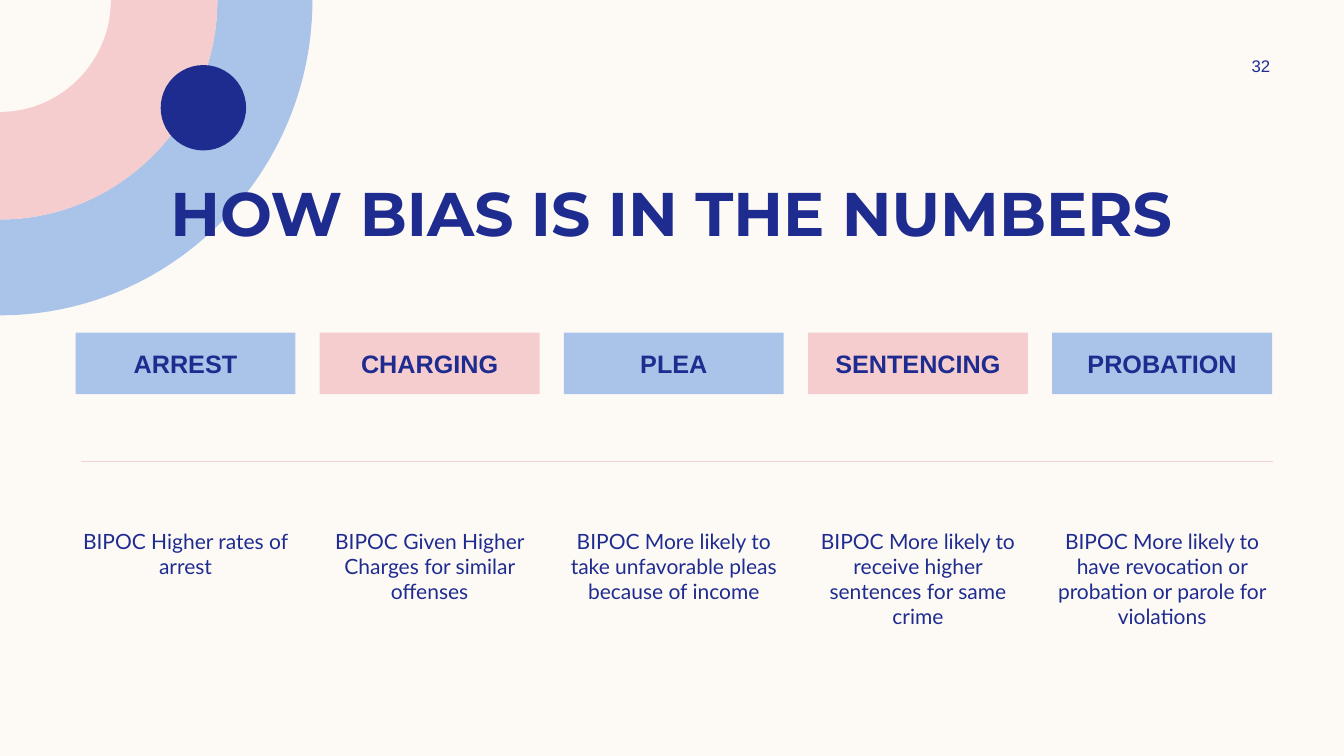
from lxml.etree import SubElement
from pptx import Presentation
from pptx.dml.color import RGBColor
from pptx.enum.shapes import MSO_CONNECTOR, MSO_SHAPE
from pptx.enum.text import MSO_ANCHOR as Anchor, PP_ALIGN as Align
from pptx.oxml.ns import qn
from pptx.util import Pt

CREAM = RGBColor(0xFD, 0xFA, 0xF6)
BLUE = RGBColor(0xAA, 0xC3, 0xE8)
PINK = RGBColor(0xF5, 0xCD, 0xCE)
NAVY = RGBColor(0x1F, 0x2C, 0x8F)
RULE = RGBColor(0xF2, 0xD1, 0xD1)

STAGES = [
    ("ARREST", "BIPOC Higher rates of arrest", 62.6),
    ("CHARGING", "BIPOC Given Higher Charges for similar offenses", 62.6),
    ("PLEA", "BIPOC More likely to take unfavorable pleas because of income", 62.6),
    ("SENTENCING", "BIPOC More likely to receive higher sentences for same crime", 79.2),
    ("PROBATION", "BIPOC More likely to have revocation or probation or parole for violations", 86.4),
]
STAGE_LEFT, STAGE_STEP, STAGE_WIDTH = 54, 174.4, 157
OUTER, MIDDLE, INNER = (223.2, 225.2), (155.3, 156.8), (79.2, 79.9)
ARC_PULL = 0.55


def paint(shape, color):
    shape.shadow.inherit = False
    shape.fill.solid()
    shape.fill.fore_color.rgb = color
    shape.line.fill.background()


def write(shape, text, font, size, bold=False, anchor=Anchor.TOP, inset=(7.2, 3.6)):
    frame = shape.text_frame
    frame.word_wrap = True
    frame.vertical_anchor = anchor
    frame.margin_left = frame.margin_right = Pt(inset[0])
    frame.margin_top = frame.margin_bottom = Pt(inset[1])
    frame.text = text
    paragraph = frame.paragraphs[0]
    paragraph.alignment = Align.CENTER
    style = paragraph.runs[0].font
    style.name, style.size, style.bold = font, Pt(size), bold
    style.color.rgb = NAVY


def add_label(slide, box, text, font, size, **options):
    label = slide.shapes.add_textbox(*map(Pt, box))
    write(label, text, font, size, **options)


def quarter_arc(radii):
    x, y = radii
    return [(Pt(x), 0), (Pt(x), Pt(y * ARC_PULL)), (Pt(x * ARC_PULL), Pt(y)), (0, Pt(y))]


def bend(segments):
    curve = segments[0].makeelement(qn("a:cubicBezTo"))
    segments[0].addprevious(curve)
    for segment in segments:
        curve.append(segment[0])
        segment.getparent().remove(segment)


def add_quarter(slide, color, radii, hole=None):
    inside = quarter_arc(hole)[::-1] if hole else [(0, 0)]
    points = quarter_arc(radii) + inside
    builder = slide.shapes.build_freeform(*points[0])
    builder.add_line_segments(points[1:], close=True)
    quarter = builder.convert_to_shape()
    segments = list(quarter._element.iter(qn("a:lnTo")))
    bend(segments[:3])
    if hole:
        bend(segments[4:7])
    paint(quarter, color)


def add_dot(slide, left, top, size):
    dot = slide.shapes.add_shape(MSO_SHAPE.OVAL, Pt(left), Pt(top), Pt(size), Pt(size))
    paint(dot, NAVY)


def add_rule(slide, left, right, y):
    rule = slide.shapes.add_connector(MSO_CONNECTOR.STRAIGHT, Pt(left), Pt(y), Pt(right), Pt(y))
    rule.line.color.rgb = RULE
    rule.line.width = Pt(1)
    SubElement(rule._element.spPr, qn("a:effectLst"))


def add_stage(slide, index, heading, finding, finding_height):
    left = STAGE_LEFT + index * STAGE_STEP
    banner = slide.shapes.add_shape(
        MSO_SHAPE.RECTANGLE, Pt(left), Pt(237.6), Pt(STAGE_WIDTH), Pt(43.9))
    paint(banner, PINK if index % 2 else BLUE)
    write(banner, heading, "Arial", 18, bold=True, anchor=Anchor.MIDDLE, inset=(0, 0))
    add_label(slide, (left, 373.7, STAGE_WIDTH, finding_height), finding, "Lato", 15,
              inset=(0, 3.6))


def main():
    deck = Presentation()
    deck.slide_width, deck.slide_height = Pt(960), Pt(540)
    slide = deck.slides.add_slide(deck.slide_layouts[6])
    slide.background.fill.solid()
    slide.background.fill.fore_color.rgb = CREAM

    add_quarter(slide, BLUE, OUTER, hole=MIDDLE)
    add_quarter(slide, PINK, MIDDLE)
    add_quarter(slide, CREAM, INNER)
    add_dot(slide, 114.8, 46.5, 61)
    add_rule(slide, 58, 909.4, 329.6)

    add_label(slide, (59.8, 121.6, 840, 84), "HOW BIAS IS IN THE NUMBERS", "Montserrat", 44, bold=True)
    add_label(slide, (861.8, 36, 77.8, 21.6), "32", "Arial", 12, anchor=Anchor.MIDDLE)
    for index, stage in enumerate(STAGES):
        add_stage(slide, index, *stage)
    deck.save("out.pptx")


if __name__ == "__main__":
    main()
